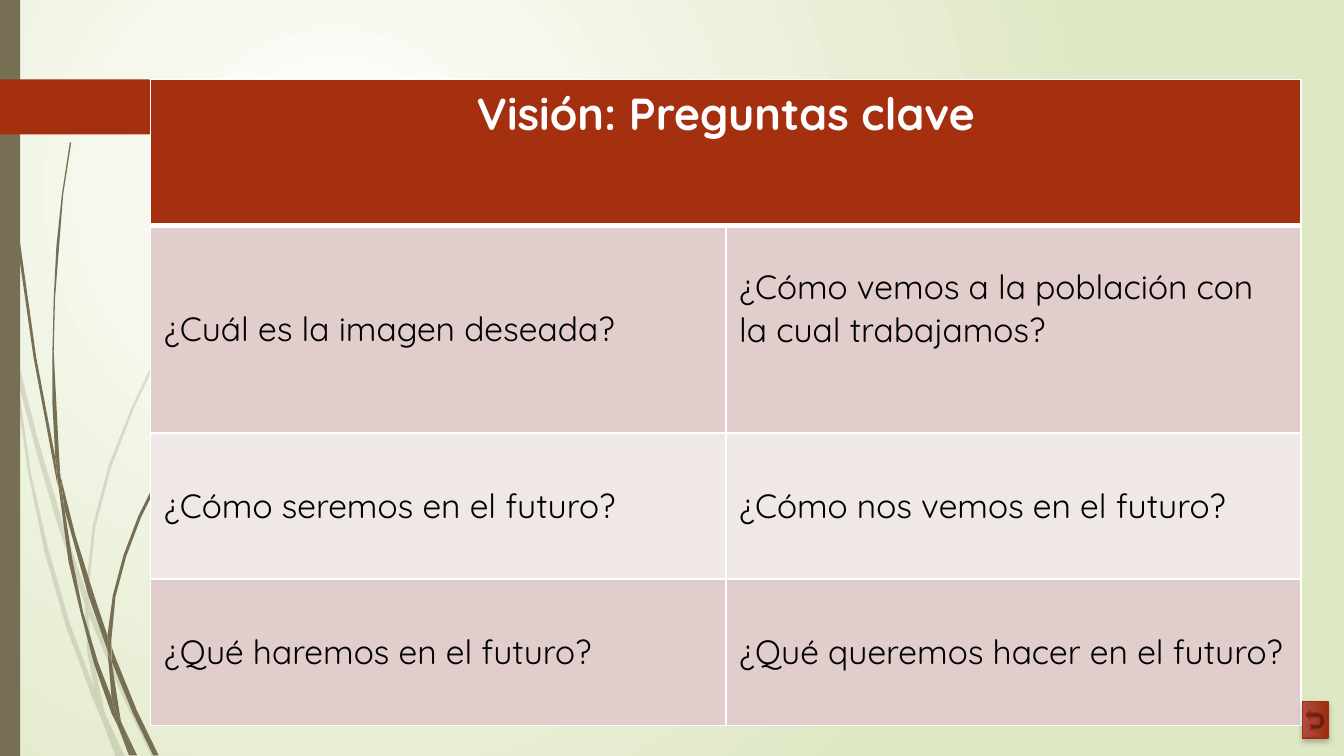
from lxml import etree
from pptx import Presentation, oxml
from pptx import util as u
from pptx.dml.color import RGBColor
from pptx.enum import shapes, text
from pptx.oxml.ns import qn, nsdecls

HUES = {"stem": "766F54", "rust": "A53010", "rose": "E1CDCC", "pale": "F0E8E7",
        "white": "FFFFFF", "black": "000000", "lime": "DFE8C4",
        "top": "B14E43", "base": "9A2D0F", "edge": "9E2E0F"}
RGB = {name: RGBColor.from_string(code) for name, code in HUES.items()}
FONT = "Quicksand"

FAINT = [
    [(0.08, 2.63), (0.06, 2.41), (0, 2.11), (0, 2.24), (0.08, 2.58)],
    [(0.43, 3.91), (0.63, 4.49), (0.64, 4.4), (0.47, 3.9), (0.28, 3.26), (0.11, 2.59),
     (0.13, 2.82), (0.27, 3.36)],
    [(0.69, 4.55), (0.66, 4.47), (0.66, 4.58), (0.92, 5.2), (1.13, 5.63), (1.16, 5.63),
     (0.95, 5.19)],
    [(0.89, 5.63), (0.93, 5.63), (0.79, 5.33)],
    [(0.7, 5.12), (0.52, 4.64), (0.36, 4.09), (0.23, 3.52), (0.13, 2.82), (0.08, 2.63),
     (0.21, 3.52), (0.33, 4.1), (0.49, 4.66), (0.69, 5.2), (0.76, 5.36), (0.74, 5.3)],
    [(0.63, 4.49), (0.65, 4.85), (0.7, 5.12), (0.72, 5.19), (0.79, 5.33), (0.78, 5.3),
     (0.68, 4.84), (0.66, 4.58), (0.66, 4.56)],
    [(0.66, 4.38), (0.71, 3.92), (0.83, 3.47), (1, 3.03), (1.2, 2.61), (1.71, 1.84),
     (2.01, 1.48), (2.34, 1.15), (2.01, 1.48), (1.71, 1.83), (1.18, 2.61), (0.98, 3.03),
     (0.81, 3.46), (0.69, 3.91), (0.64, 4.38), (0.64, 4.4), (0.66, 4.47)],
    [(0.76, 5.36), (0.86, 5.63), (0.89, 5.63)],
    [(0.66, 4.56), (0.66, 4.58), (0.66, 4.47), (0.64, 4.4), (0.63, 4.49)],
    [(0.72, 5.19), (0.7, 5.12), (0.74, 5.3), (0.76, 5.36), (0.89, 5.63), (0.79, 5.33)],
]
DARK = [
    [(0.05, 0.82), (0.12, 1.75), (0.25, 2.66), (0.42, 3.57), (0.43, 3.61), (0.41, 3.4),
     (0.27, 2.66), (0.14, 1.74), (0.06, 0.82), (0.03, 0.36), (0.03, 0), (0.02, 0),
     (0.03, 0.36)],
    [(0.66, 4.44), (0.8, 4.84), (0.8, 4.73), (0.7, 4.43), (0.56, 3.98), (0.45, 3.54),
     (0.48, 3.79)],
    [(0.85, 4.87), (0.83, 4.81), (0.83, 4.92), (0.99, 5.31), (1.14, 5.62), (1.18, 5.62),
     (1.02, 5.29)],
    [(0.83, 5.19), (0.73, 4.93), (0.62, 4.56), (0.54, 4.17), (0.48, 3.79), (0.43, 3.58),
     (0.51, 4.18), (0.6, 4.56), (0.7, 4.94), (0.83, 5.31), (0.88, 5.41), (0.87, 5.38)],
    [(0.45, 3.54), (0.44, 3.4), (0.4, 2.62), (0.41, 2.22), (0.44, 1.83), (0.47, 1.45),
     (0.53, 1.06), (0.52, 1.06), (0.46, 1.45), (0.42, 1.83), (0.4, 2.22), (0.39, 2.62),
     (0.39, 3), (0.41, 3.37)],
    [(1, 5.62), (1.02, 5.62), (0.91, 5.39)],
    [(0.43, 3.58), (0.48, 3.79), (0.45, 3.54), (0.41, 3.37), (0.41, 3.4)],
    [(0.83, 4.75), (0.86, 4.44), (0.94, 4.14), (1.05, 3.85), (1.19, 3.57), (1.53, 3.05),
     (1.73, 2.81), (1.96, 2.58), (1.95, 2.58), (1.73, 2.8), (1.53, 3.04), (1.17, 3.56),
     (1.03, 3.84), (0.92, 4.13), (0.84, 4.43), (0.8, 4.73), (0.83, 4.81)],
    [(0.88, 5.41), (0.96, 5.62), (0.98, 5.62)],
    [(0.8, 4.84), (0.83, 5.19), (0.87, 5.3), (0.91, 5.39), (0.9, 5.37), (0.83, 4.92),
     (0.81, 4.88)],
    [(0.8, 4.84), (0.83, 4.92), (0.83, 4.81), (0.8, 4.73), (0.8, 4.75)],
    [(0.87, 5.3), (0.83, 5.19), (0.87, 5.38), (0.88, 5.41), (0.98, 5.62), (1, 5.62),
     (0.91, 5.39)],
]
TAG = [(1.3, 0.81), (1.11, 1), (0, 1), (0, 0.59), (1.11, 0.59), (1.3, 0.78)]
ROWS = [
    ("Visión: Preguntas clave", ""),
    ("¿Cuál es la imagen deseada?", "¿Cómo vemos a la población con la cual trabajamos?"),
    ("¿Cómo seremos en el futuro?", "¿Cómo nos vemos en el futuro?"),
    ("¿Qué haremos en el futuro?", "¿Qué queremos hacer en el futuro?"),
]


def trace(parent, dots, hue):
    dots = [(u.Inches(x), u.Inches(y)) for x, y in dots]
    pen = parent.build_freeform(*dots[0])
    pen.add_line_segments(dots[1:], close=True)
    form = pen.convert_to_shape()
    form.shadow.inherit = False
    form.fill.solid()
    form.fill.fore_color.rgb = RGB[hue]
    form.line.fill.background()
    return form


def blend(fill, start, end):
    fill.gradient()
    for stop, hue, place in zip(fill.gradient_stops, (start, end), (0, 1)):
        stop.color.rgb = RGB[hue]
        stop.position = place


deck = Presentation()
deck.slide_width, deck.slide_height = u.Inches(10), u.Inches(10 * 9 / 16)
slide = deck.slides.add_slide(deck.slide_layouts[6])

blend(slide.background.fill, "white", "lime")
lin = next(slide.background._cSld.iter(qn("a:lin")))
lin.getparent().replace(lin, oxml.parse_xml(
    f'<a:path {nsdecls("a")} path="circle">'
    '<a:fillToRect l="50000" t="50000" r="100000" b="100000"/></a:path>'))

for blades, alpha in ((FAINT, 20000), (DARK, 100000)):
    tuft = slide.shapes.add_group_shape()
    for dots in blades:
        blade = trace(tuft.shapes, dots, "stem")
        tint = next(blade._element.spPr.iter(qn("a:srgbClr")))
        if alpha < 100000:
            etree.SubElement(tint, qn("a:alpha")).set("val", str(alpha))

bar = slide.shapes.add_shape(shapes.MSO_SHAPE.RECTANGLE, 0, 0,
                             u.Inches(0.15), deck.slide_height)
bar.shadow.inherit = False
bar.fill.solid()
bar.fill.fore_color.rgb = RGB["stem"]
bar.line.fill.background()
trace(slide.shapes, TAG, "rust")

grid = slide.shapes.add_table(4, 2, u.Inches(1.12), u.Inches(0.59),
                              u.Inches(8.56), u.Inches(4.82)).table
for row, high in zip(grid.rows, (1.09, 1.54, 1.09, 1.09)):
    row.height = u.Inches(high)
grid.cell(0, 0).merge(grid.cell(0, 1))
for r, words in enumerate(ROWS):
    head = r == 0
    for c, word in enumerate(words):
        cell = grid.cell(r, c)
        cell.fill.solid()
        cell.fill.fore_color.rgb = RGB["rust" if head else ("pale", "rose")[r % 2]]
        for n, side in enumerate("LRTB"):
            thick = 3 if (r, side) in ((0, "B"), (1, "T")) else 1
            cell._tc.tcPr.insert(n, oxml.parse_xml(
                f'<a:ln{side} {nsdecls("a")} w="{u.Pt(thick)}"><a:solidFill>'
                f'<a:srgbClr val="{HUES["white"]}"/></a:solidFill></a:ln{side}>'))
        if not word:
            continue
        cell.text = word
        cell.vertical_anchor = text.MSO_ANCHOR.TOP if head else text.MSO_ANCHOR.MIDDLE
        para = cell.text_frame.paragraphs[0]
        para.alignment = text.PP_ALIGN.CENTER if head else text.PP_ALIGN.LEFT
        para.font.name = FONT
        para.font.size = u.Pt(24 if head else 18)
        para.font.bold = head
        para.font.color.rgb = RGB["white" if head else "black"]
grid.cell(1, 1).margin_bottom = u.Inches(0.36)

back = slide.shapes.add_shape(shapes.MSO_SHAPE.ACTION_BUTTON_RETURN, u.Inches(9.65),
                              u.Inches(5.26), u.Inches(0.27), u.Inches(0.19))
back.rotation = 270
blend(back.fill, "top", "base")
back.fill.gradient_angle = 270
back.line.color.rgb = RGB["edge"]
back.line.width = u.Pt(0.75)
back._element.spPr.append(oxml.parse_xml(
    f'<a:effectLst {nsdecls("a")}><a:outerShdw blurRad="{u.Pt(3)}" dist="{u.Pt(2)}" '
    f'dir="5400000" rotWithShape="0"><a:srgbClr val="{HUES["black"]}">'
    '<a:alpha val="25000"/></a:srgbClr></a:outerShdw></a:effectLst>'))

deck.save("out.pptx")
